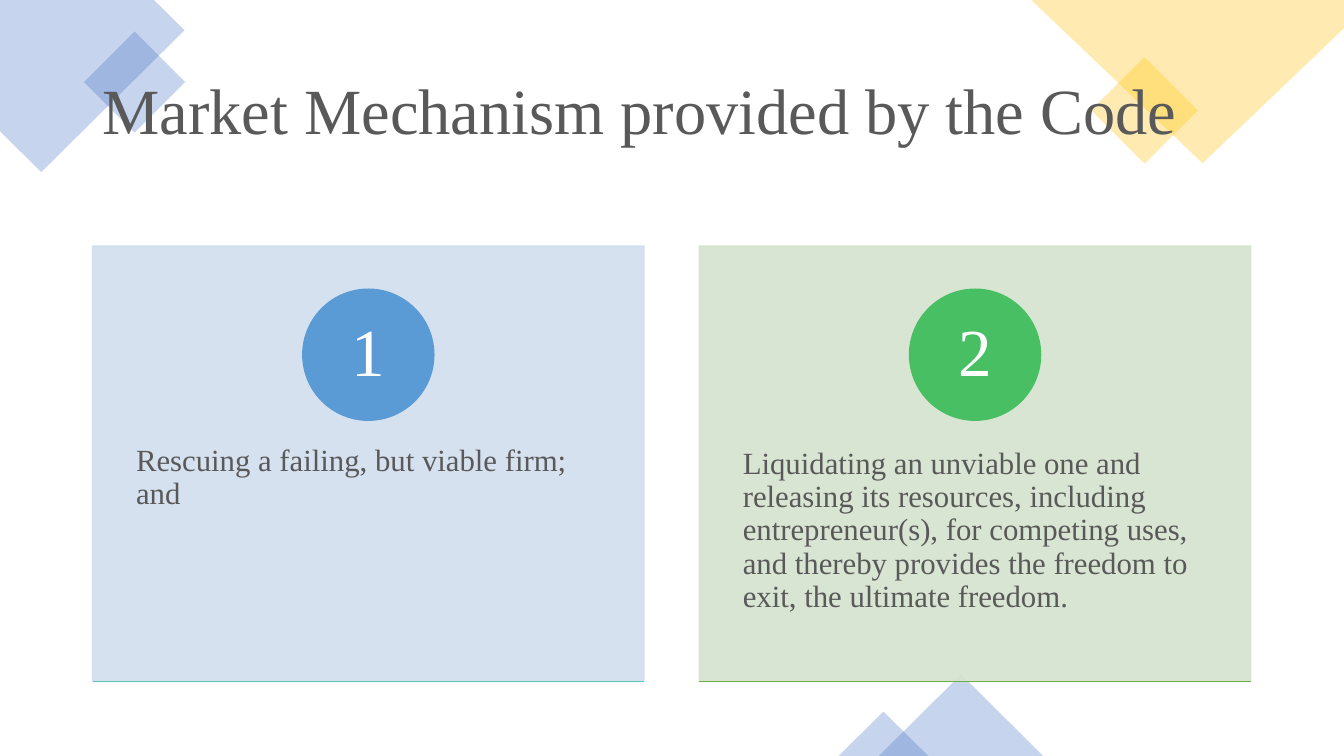
from lxml.etree import SubElement
from pptx import Presentation
from pptx.dml.color import RGBColor
from pptx.enum.shapes import MSO_CONNECTOR, MSO_SHAPE
from pptx.enum.text import MSO_ANCHOR, PP_ALIGN
from pptx.oxml.ns import qn
from pptx.util import Pt

FONT = "Times New Roman"
WHITE = RGBColor(0xFF, 0xFF, 0xFF)
GRAY = RGBColor(0x59, 0x59, 0x59)
BLUE = RGBColor(0x44, 0x72, 0xC4)
GOLD = RGBColor(0xFF, 0xC0, 0x00)
PALE_BLUE = RGBColor(0xD2, 0xDE, 0xEF)
PALE_GREEN = RGBColor(0xD5, 0xE3, 0xCF)
SKY = RGBColor(0x5B, 0x9B, 0xD5)
GREEN = RGBColor(0x49, 0xBF, 0x64)
TEAL = RGBColor(0x52, 0xCA, 0xB8)
OLIVE = RGBColor(0x70, 0xAD, 0x47)

TITLE = "Market Mechanism provided by the Code"
CARDS = [
    ("1", "Rescuing a failing, but viable firm; and", PALE_BLUE, SKY, TEAL),
    ("2", "Liquidating an unviable one and releasing its resources, including "
          "entrepreneur(s), for competing uses, and thereby provides the freedom "
          "to exit, the ultimate freedom.", PALE_GREEN, GREEN, OLIVE),
]
CORNERS = [
    ([(110, 0), (0, 0), (0, 93.6), (29.5, 123), (131.8, 21.6)], BLUE),
    ([(960, 0), (736.6, 0), (859, 116.6), (960, 20.2)], GOLD),
]
SQUARES = [(70.6, 33.1, 51.1, BLUE), (790.6, 51.8, 54, GOLD)]
TRIANGLES = [(627.8, 481.7, 117.4, 58.3), (599, 508.3, 64.1, 31.7)]

LEFT, TOP, CARD_W, CARD_H, PITCH = 66.2, 175.7, 393.8, 311, 433.4
CIRCLE, CIRCLE_TOP = 93.6, 206.6
NUMBER = 66.2
BODY_TOP, BODY_H = 293.8, 186.5

prs = Presentation()
prs.slide_width, prs.slide_height = Pt(960), Pt(540)
s = prs.slides.add_slide(prs.slide_layouts[6])


def set_alpha(color_format_parent, percent):
    for color in color_format_parent.iter(qn("a:srgbClr")):
        SubElement(color, qn("a:alpha")).set("val", str(percent * 1000))


def paint(sp, color, alpha=100, outlined=False):
    sp.shadow.inherit = False
    sp.fill.solid()
    sp.fill.fore_color.rgb = color
    if outlined:
        sp.line.color.rgb = color
        sp.line.width = Pt(1)
    else:
        sp.line.fill.background()
    if alpha < 100:
        set_alpha(sp._element.spPr, alpha)
    return sp


def add_shape(kind, x, y, w, h, color, **style):
    sp = s.shapes.add_shape(kind, Pt(x), Pt(y), Pt(w), Pt(h))
    return paint(sp, color, **style)


def add_text(text, x, y, w, h, size, color=GRAY, anchor=MSO_ANCHOR.TOP,
             align=PP_ALIGN.LEFT, inset_x=7.2, inset_y=3.6):
    tf = s.shapes.add_textbox(Pt(x), Pt(y), Pt(w), Pt(h)).text_frame
    tf.word_wrap = True
    tf.vertical_anchor = anchor
    tf.margin_left = tf.margin_right = Pt(inset_x)
    tf.margin_top = tf.margin_bottom = Pt(inset_y)
    p = tf.paragraphs[0]
    p.alignment = align
    p.line_spacing = 0.9
    r = p.add_run()
    r.text = text
    r.font.name, r.font.size = FONT, Pt(size)
    r.font.color.rgb = color


for points, color in CORNERS:
    outline = [(Pt(x), Pt(y)) for x, y in points]
    builder = s.shapes.build_freeform(*outline[0])
    builder.add_line_segments(outline[1:], close=True)
    paint(builder.convert_to_shape(), color, alpha=30)

for x, y, side, color in SQUARES:
    add_shape(MSO_SHAPE.RECTANGLE, x, y, side, side, color, alpha=30).rotation = 315

for box in TRIANGLES:
    add_shape(MSO_SHAPE.ISOSCELES_TRIANGLE, *box, BLUE, alpha=30)

add_text(TITLE, LEFT, 28.8, 828, 104.4, 46, anchor=MSO_ANCHOR.MIDDLE)

for i, (number, body, card_color, circle_color, line_color) in enumerate(CARDS):
    x = LEFT + i * PITCH
    center = x + CARD_W / 2
    bottom = TOP + CARD_H
    add_shape(MSO_SHAPE.RECTANGLE, x, TOP, CARD_W, CARD_H, card_color,
              alpha=90, outlined=True)
    add_text(body, x, BODY_TOP, CARD_W, BODY_H, 22, inset_x=31, inset_y=26)
    add_shape(MSO_SHAPE.OVAL, center - CIRCLE / 2, CIRCLE_TOP, CIRCLE, CIRCLE,
              circle_color, outlined=True)
    add_text(number, center - NUMBER / 2, CIRCLE_TOP + (CIRCLE - NUMBER) / 2,
             NUMBER, NUMBER, 48, color=WHITE, anchor=MSO_ANCHOR.MIDDLE,
             align=PP_ALIGN.CENTER, inset_y=0.7)
    rule = s.shapes.add_connector(MSO_CONNECTOR.STRAIGHT, Pt(x), Pt(bottom),
                                  Pt(x + CARD_W), Pt(bottom))
    rule.line.color.rgb = line_color
    rule.line.width = Pt(1)
    SubElement(rule._element.spPr, qn("a:effectLst"))

prs.save("out.pptx")
